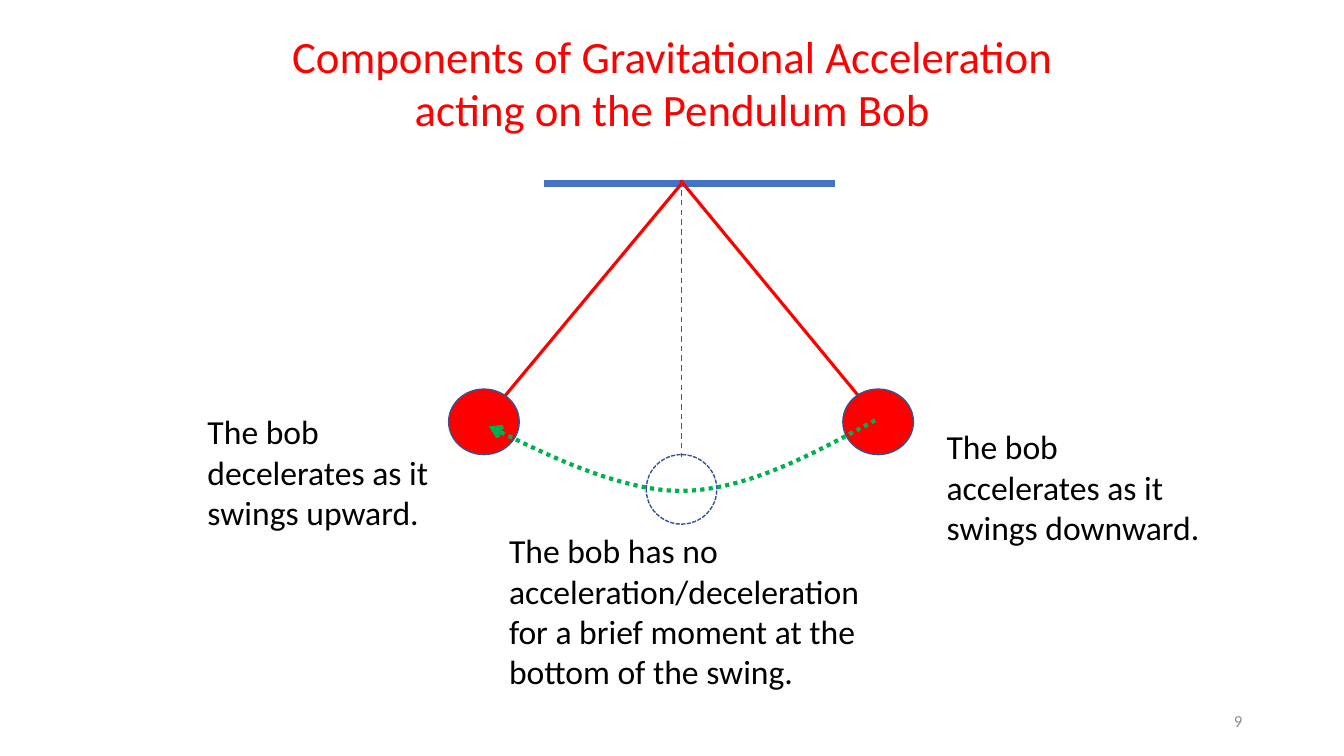
from lxml import etree
from pptx import Presentation
from pptx.dml.color import RGBColor
from pptx.enum.dml import MSO_LINE
from pptx.enum.shapes import MSO_CONNECTOR, MSO_SHAPE
from pptx.enum.text import MSO_ANCHOR, MSO_AUTO_SIZE, PP_ALIGN
from pptx.oxml.ns import qn
from pptx.util import Pt

PX = 9144  # EMU per px, 100 px to the inch
LEFT, CENTER, RIGHT = PP_ALIGN.LEFT, PP_ALIGN.CENTER, PP_ALIGN.RIGHT
TOP, MIDDLE = MSO_ANCHOR.TOP, MSO_ANCHOR.MIDDLE
DASH, SHORT_DASH, DOTS = MSO_LINE.DASH, MSO_LINE.SQUARE_DOT, MSO_LINE.ROUND_DOT
STRAIGHT, OVAL = MSO_CONNECTOR.STRAIGHT, MSO_SHAPE.OVAL
RED, OUTLINE, BLACK = "FF0000", "325491", "000000"

# Content: boxes are left, top, width, height in px
TITLE = "Components of Gravitational Acceleration acting on the Pendulum Bob"
TITLE_BOX = (243, 23, 848, 118)
CAPTIONS = [
    ("The bob accelerates as it swings downward.", (929, 418, 273, 131)),
    ("The bob decelerates as it swings upward.", (196, 403, 276, 131)),
    ("The bob has no acceleration/deceleration for a brief moment "
     "at the bottom of the swing.", (495, 521, 392, 172)),
]
PAGE_NUMBER, PAGE_BOX = "9", (942, 695, 300, 40)

# Lines: start, end, colour, width in points, dash
LINES = [
    ((540, 182), (828, 182), "4472C4", 4.5, None),  # support
    ((675, 179), (874, 420), RED, 2.25, None),      # right string
    ((677, 181), (479, 419), RED, 2.25, None),      # left string
    ((676, 179), (676, 453), "0070C0", 1, DASH),    # rest position
]
# Bobs: box, fill, dash
BOBS = [
    ((836, 386, 70, 65), RED, None),
    ((641, 451, 70, 69), None, SHORT_DASH),
    ((445, 386, 70, 65), RED, None),
]
# Swing: start, then two controls and an end for each curve
SWING = [(868, 417), (805, 451), (741, 486), (677, 487),
         (613, 488), (485, 423), (485, 423)]


def color(hex_string):
    return RGBColor.from_string(hex_string)


def emu(lengths):
    return [length * PX for length in lengths]


def set_line(line, hex_string, width, dash):
    line.color.rgb = color(hex_string)
    line.width = Pt(width)
    if dash is not None:
        line.dash_style = dash


def write(shape, text, size, hex_string, align=LEFT, anchor=TOP):
    frame = shape.text_frame
    frame.text = text
    frame_format = {"word_wrap": True, "auto_size": MSO_AUTO_SIZE.NONE,
                    "vertical_anchor": anchor}
    for name, value in frame_format.items():
        setattr(frame, name, value)
    paragraph = frame.paragraphs[0]
    paragraph.alignment = align
    font = paragraph.runs[0].font
    font_format = {"name": "Calibri", "size": Pt(size)}
    for name, value in font_format.items():
        setattr(font, name, value)
    font.color.rgb = color(hex_string)


def draw_bob(shapes, box, fill, dash):
    bob = shapes.add_shape(OVAL, *emu(box))
    bob.shadow.inherit = False
    if fill:
        bob.fill.solid()
        bob.fill.fore_color.rgb = color(fill)
    else:
        bob.fill.background()
    set_line(bob.line, OUTLINE, 1, dash)


def draw_swing(shapes):
    builder = shapes.build_freeform(*SWING[0], scale=PX)
    builder.add_line_segments(SWING[1:], close=False)
    swing = builder.convert_to_shape()
    swing.shadow.inherit = False
    swing.fill.background()
    set_line(swing.line, "00B050", 3, DOTS)
    properties = swing.element.spPr
    # Every three segments become one cubic curve
    segments = list(properties.iter(qn("a:lnTo")))
    outline = segments[0].getparent()
    for first in range(0, len(segments), 3):
        curve = etree.SubElement(outline, qn("a:cubicBezTo"))
        for segment in segments[first:first + 3]:
            curve.append(segment[0])
            outline.remove(segment)
    etree.SubElement(properties.find(qn("a:ln")), qn("a:tailEnd"), type="arrow")


def main():
    deck = Presentation()
    deck.slide_width, deck.slide_height = emu((1333, 750))
    slide = deck.slides.add_slide(deck.slide_layouts[5])
    shapes = slide.shapes

    # Title
    title = shapes.title
    for name, value in zip(("left", "top", "width", "height"), emu(TITLE_BOX)):
        setattr(title, name, value)
    write(title, TITLE, 32, RED, CENTER)

    # Support, strings and rest position
    for start, end, hex_string, width, dash in LINES:
        connector = shapes.add_connector(STRAIGHT, *emu(start + end))
        set_line(connector.line, hex_string, width, dash)
        etree.SubElement(connector.element.spPr, qn("a:effectLst"))

    # Bobs and the path of the swing
    for bob in BOBS:
        draw_bob(shapes, *bob)
    draw_swing(shapes)

    # Captions and page number
    for caption, box in CAPTIONS:
        write(shapes.add_textbox(*emu(box)), caption, 24, BLACK)
    write(shapes.add_textbox(*emu(PAGE_BOX)), PAGE_NUMBER, 12, "8C8C8C",
          RIGHT, MIDDLE)

    deck.save("out.pptx")


if __name__ == "__main__":
    main()
